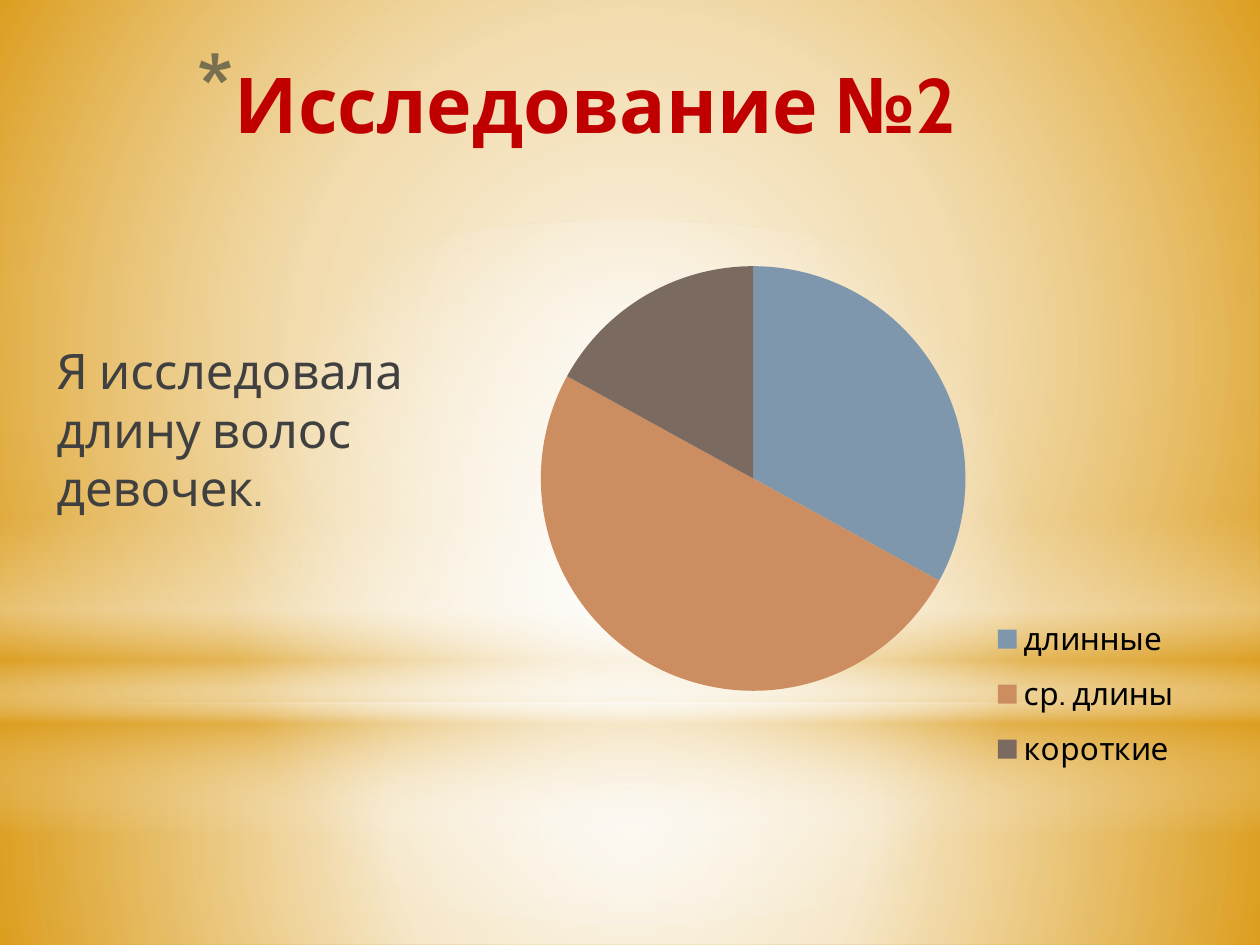
from dataclasses import dataclass
from typing import Optional

from pptx import Presentation
from pptx.chart.data import CategoryChartData
from pptx.dml.color import RGBColor
from pptx.enum.chart import XL_CHART_TYPE, XL_LEGEND_POSITION
from pptx.enum.shapes import MSO_SHAPE
from pptx.enum.text import MSO_ANCHOR, MSO_AUTO_SIZE, PP_ALIGN
from pptx.oxml import parse_xml
from pptx.oxml.ns import nsdecls, qn
from pptx.util import Inches, Pt


@dataclass(frozen=True)
class Theme:
    font: str = "Cabin"
    gold: str = "DC9E1F"
    white: str = "FFFFFF"
    title: str = "C00000"
    bullet: str = "786F51"
    body: str = "404040"
    legend: str = "000000"
    title_size: int = 44
    body_size: int = 28
    legend_size: int = 18


@dataclass(frozen=True)
class Box:
    left: float
    top: float
    width: float
    height: float

    def lengths(self) -> list:
        return [Inches(v) for v in (self.left, self.top, self.width, self.height)]


@dataclass(frozen=True)
class Stop:
    pos: int
    color: str
    alpha: int = 100


@dataclass(frozen=True)
class Glow:
    box: Box
    stops: tuple
    preset: MSO_SHAPE = MSO_SHAPE.RECTANGLE
    angle: Optional[int] = None  # None means the gradient spreads from the centre


@dataclass(frozen=True)
class Slice:
    name: str
    value: int
    color: str


T = Theme()
W, G = T.white, T.gold
GLOWS = (
    Glow(Box(0, 5.58, 10, 1.92), (Stop(0, W, 91), Stop(37, W, 76), Stop(100, G, 79))),
    Glow(Box(0, 0, 10, 5.58), (Stop(0, W, 89), Stop(48, W, 62), Stop(100, G, 79))),
    Glow(Box(0, 4.12, 10, 2.5),
         (Stop(0, W, 0), Stop(29, W, 30), Stop(45, G, 40),
          Stop(55, W, 26), Stop(65, G, 60), Stop(100, W, 0)), angle=90),
    Glow(Box(0, 1.75, 10, 5.58), (Stop(0, W), Stop(56, W, 0)), MSO_SHAPE.OVAL),
)
SLICES = (
    Slice("длинные", 33, "7E97AD"),
    Slice("ср. длины", 50, "CC8E60"),
    Slice("короткие", 17, "7A6A60"),
)


def rgb(color: str) -> RGBColor:
    return RGBColor.from_string(color)


def grad_fill(glow: Glow):
    stops = "".join(
        f'<a:gs pos="{s.pos * 1000}"><a:srgbClr val="{s.color}">'
        f'<a:alpha val="{s.alpha * 1000}"/></a:srgbClr></a:gs>' for s in glow.stops)
    if glow.angle is None:
        spread = ('<a:path path="circle"><a:fillToRect l="50000" t="50000" '
                  'r="50000" b="50000"/></a:path>')
    else:
        spread = f'<a:lin ang="{glow.angle * 60000}" scaled="0"/>'
    return parse_xml(f'<a:gradFill {nsdecls("a")} rotWithShape="1">'
                     f'<a:gsLst>{stops}</a:gsLst>{spread}</a:gradFill>')


def add_glow(s, glow: Glow, index: int) -> None:
    sp = s.shapes.add_shape(glow.preset, *glow.box.lengths())
    sp.shadow.inherit = False
    sp.line.fill.background()
    sp.fill.background()
    spPr = sp.element.spPr
    spPr.replace(spPr.find(qn("a:noFill")), grad_fill(glow))
    # Keep the backdrop behind the placeholders
    s.shapes.element.insert(2 + index, sp.element)


def fill_placeholder(sp, box: Box, text: str, size: int, color: str,
                     anchor: MSO_ANCHOR, bold: bool = False):
    sp.left, sp.top, sp.width, sp.height = box.lengths()
    tf = sp.text_frame
    tf.word_wrap = True
    tf.auto_size = MSO_AUTO_SIZE.NONE
    tf.vertical_anchor = anchor
    p = tf.paragraphs[0]
    p.alignment = PP_ALIGN.LEFT
    r = p.add_run()
    r.text = text
    r.font.name, r.font.size, r.font.bold = T.font, Pt(size), bold
    r.font.color.rgb = rgb(color)
    return p


def set_bullet(p, indent: float, *bullet: str) -> None:
    pPr = p._p.get_or_add_pPr()
    pPr.set("marL", str(Inches(indent)))
    pPr.set("indent", str(-Inches(indent)))
    for xml in bullet:
        tag, attrs = xml.split(" ", 1) if " " in xml else (xml, "")
        pPr.append(parse_xml(f'<a:{tag} {nsdecls("a")} {attrs}/>'))


def manual_layout(box: Box, inner: bool = False):
    target = '<c:layoutTarget val="inner"/>' if inner else ""
    return parse_xml(
        f'<c:layout {nsdecls("c")}><c:manualLayout>{target}'
        '<c:xMode val="edge"/><c:yMode val="edge"/>'
        f'<c:x val="{box.left}"/><c:y val="{box.top}"/>'
        f'<c:w val="{box.width}"/><c:h val="{box.height}"/>'
        '</c:manualLayout></c:layout>')


def add_pie(s, box: Box, slices: tuple) -> None:
    data = CategoryChartData()
    data.categories = [sl.name for sl in slices]
    data.add_series("Series 1", [sl.value for sl in slices])
    chart = s.shapes.add_chart(XL_CHART_TYPE.PIE, *box.lengths(), data).chart
    chart.has_title = False
    chart.font.name, chart.font.size = T.font, Pt(T.legend_size)
    chart.font.color.rgb = rgb(T.legend)
    plot = chart.plots[0]
    plot.vary_by_categories = True
    for i, sl in enumerate(slices):
        fill = plot.series[0].points[i].format.fill
        fill.solid()
        fill.fore_color.rgb = rgb(sl.color)

    # Pie at the left, legend at the lower right, as fractions of the chart
    chart.has_legend = True
    chart.legend.position = XL_LEGEND_POSITION.RIGHT
    chart.legend.include_in_layout = False
    area = chart.element.find(".//" + qn("c:plotArea"))
    legend = chart.element.find(".//" + qn("c:legend"))
    for parent, layout in ((area, manual_layout(Box(0.03, 0.18, 0.64, 0.63), True)),
                           (legend, manual_layout(Box(0.7, 0.68, 0.3, 0.27)))):
        for old in parent.findall(qn("c:layout")):
            parent.remove(old)
        parent.insert(0 if parent is area else 1, layout)


def main() -> None:
    prs = Presentation()
    prs.slide_width, prs.slide_height = Inches(10), Inches(7.5)
    s = prs.slides.add_slide(prs.slide_layouts[1])

    # Backdrop
    s.background.fill.solid()
    s.background.fill.fore_color.rgb = rgb(T.gold)
    for i, glow in enumerate(GLOWS):
        add_glow(s, glow, i)

    # Title with its asterisk
    p = fill_placeholder(s.shapes.title, Box(1.46, 0.29, 7.56, 0.94), "Исследование №2",
                         T.title_size, T.title, MSO_ANCHOR.BOTTOM, bold=True)
    set_bullet(p, 0.25, 'buSzPct val="128000"', 'buChar char="*"')
    color = parse_xml(f'<a:buClr {nsdecls("a")}><a:srgbClr val="{T.bullet}"/></a:buClr>')
    p._p.pPr.insert(0, color)

    # Chart and comment
    add_pie(s, Box(4.13, 1.15, 5.28, 5.35), SLICES)
    p = fill_placeholder(s.placeholders[1], Box(0.35, 2.65, 3.7, 3.44),
                         "Я исследовала длину волос девочек.",
                         T.body_size, T.body, MSO_ANCHOR.TOP)
    p.space_after = Pt(3)
    set_bullet(p, 0, "buNone")

    prs.save("out.pptx")


if __name__ == "__main__":
    main()
